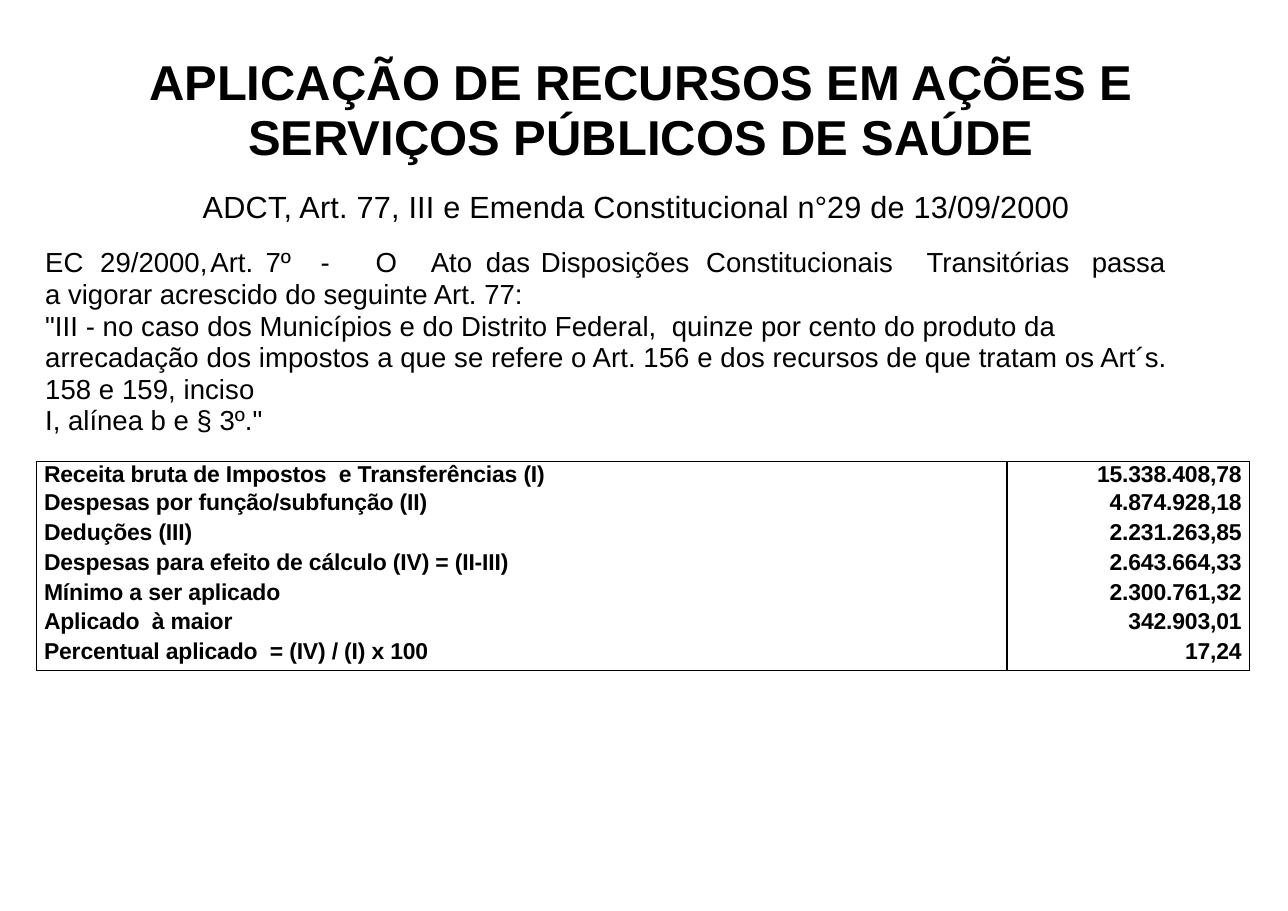
from pptx import Presentation
from pptx import util as u
from pptx.dml.color import RGBColor
from pptx.enum import text
from pptx.oxml import parse_xml
from pptx.oxml.ns import nsdecls

COLORS = {"ink": "000000"}
FONT = "Arial"
BORDER_WIDTH = u.Pt(0.85)

TITLE = "APLICAÇÃO DE RECURSOS EM AÇÕES E SERVIÇOS PÚBLICOS DE SAÚDE"
LEGAL_BASIS = "ADCT, Art. 77, III e Emenda Constitucional n°29 de 13/09/2000"
AMENDMENT = ("EC\t29/2000,\tArt.\t7º\t-\tO\tAto\tdas\tDisposições\tConstitucionais"
             "\tTransitórias\tpassa\ta vigorar acrescido do seguinte Art. 77:")
ARTICLE = ('"III - no caso dos Municípios e do Distrito Federal,  quinze por cento '
           "do produto da arrecadação dos impostos a que se refere o Art. 156 e dos "
           "recursos de que tratam os Art´s. 158 e 159, inciso")
ARTICLE_END = 'I, alínea b e § 3º."'
WORD_STOPS = (0.52, 1.64, 2.18, 2.57, 2.81, 3.16, 3.68, 4.24, 5.73, 7.58, 9.03, 9.86)

# Text, size, left indent, line spacing, space before, letter spacing (points)
CITATION = [
    (LEGAL_BASIS, 20, 1.44, None, 0, 0.15),
    (AMENDMENT, 18, 0.01, 21, 13.8, 0),
    (ARTICLE, 18, 0.01, 20.3, 0.6, 0.06),
    (ARTICLE_END, 18, 0.01, 20.4, 0, 0),
]

HEALTH_SPENDING = [
    ("Receita bruta de Impostos  e Transferências (I)", "15.338.408,78"),
    ("Despesas por função/subfunção (II)", "4.874.928,18"),
    ("Deduções (III)", "2.231.263,85"),
    ("Despesas para efeito de cálculo (IV) = (II-III)", "2.643.664,33"),
    ("Mínimo a ser aplicado", "2.300.761,32"),
    ("Aplicado  à maior", "342.903,01"),
    ("Percentual aplicado  = (IV) / (I) x 100", "17,24"),
]
ROW_HEIGHTS = [0.26] + [0.27] * 5 + [0.29]


def format_runs(paragraph, size, bold=False, tracking=0):
    for run in paragraph.runs:
        run.font.name = FONT
        run.font.size = u.Pt(size)
        run.font.bold = bold
        run.font.color.rgb = RGBColor.from_string(COLORS["ink"])
        run.font._element.set("spc", str(round(tracking * 100)))


def place(placeholder, left, top, width, height):
    placeholder.left, placeholder.top = u.Inches(left), u.Inches(top)
    placeholder.width, placeholder.height = u.Inches(width), u.Inches(height)
    frame = placeholder.text_frame
    frame.margin_left = frame.margin_right = frame.margin_top = frame.margin_bottom = 0
    frame.vertical_anchor = text.MSO_ANCHOR.TOP
    frame.auto_size = text.MSO_AUTO_SIZE.NONE
    frame.word_wrap = True
    return frame


def add_title(slide):
    frame = place(slide.shapes.title, 0.4, 0.5, 10.84, 0.95)
    frame.text = TITLE
    heading = frame.paragraphs[0]
    heading.alignment = text.PP_ALIGN.CENTER
    heading.line_spacing = u.Pt(36)
    format_runs(heading, 32, bold=True)


def add_citation(slide):
    frame = place(slide.placeholders[1], 0.4, 1.71, 10.6, 2.25)
    for index, (wording, size, indent, leading, before, tracking) in enumerate(CITATION):
        passage = frame.add_paragraph() if index else frame.paragraphs[0]
        passage.text = wording
        passage.alignment = text.PP_ALIGN.LEFT
        passage.space_before = u.Pt(before)
        passage.line_spacing = u.Pt(leading) if leading else 1.0
        format_runs(passage, size, tracking=tracking)
        # Plain indented text without bullets
        properties = passage._p.get_or_add_pPr()
        properties.set("marL", str(u.Inches(indent)))
        properties.set("indent", "0")
        properties.append(parse_xml(f'<a:buNone {nsdecls("a")}/>'))
        if "\t" in wording:
            stops = "".join(f'<a:tab pos="{u.Inches(stop)}" algn="l"/>' for stop in WORD_STOPS)
            properties.append(parse_xml(f'<a:tabLst {nsdecls("a")}>{stops}</a:tabLst>'))


def set_borders(cell, sides):
    properties = cell._tc.get_or_add_tcPr()
    for position, side in enumerate("LRTB"):
        paint = "<a:noFill/>"
        if side in sides:
            paint = f'<a:solidFill><a:srgbClr val="{COLORS["ink"]}"/></a:solidFill>'
        properties.insert(position, parse_xml(
            f'<a:ln{side} {nsdecls("a")} w="{BORDER_WIDTH}">{paint}</a:ln{side}>'))


def fill_cell(cell, wording, alignment, sides):
    cell.margin_left = cell.margin_right = u.Inches(0.07)
    cell.margin_top = cell.margin_bottom = 0
    cell.vertical_anchor = text.MSO_ANCHOR.TOP
    cell.fill.background()
    cell.text_frame.text = wording
    entry = cell.text_frame.paragraphs[0]
    entry.alignment = alignment
    format_runs(entry, 15, bold=True, tracking=-0.12)
    set_borders(cell, sides)


def add_spending_table(slide):
    last = len(HEALTH_SPENDING) - 1
    spending = slide.shapes.add_table(
        last + 1, 2, u.Inches(0.33), u.Inches(4.19), u.Inches(11.01), u.Inches(1.9)).table
    spending.first_row = spending.horz_banding = False
    for column, width in zip(spending.columns, (8.81, 2.2)):
        column.width = u.Inches(width)
    for index, (label, amount) in enumerate(HEALTH_SPENDING):
        spending.rows[index].height = u.Inches(ROW_HEIGHTS[index])
        sides = "LR" + ("T" if index == 0 else "") + ("B" if index == last else "")
        fill_cell(spending.cell(index, 0), label, text.PP_ALIGN.LEFT, sides)
        fill_cell(spending.cell(index, 1), amount, text.PP_ALIGN.RIGHT, sides)


def main():
    deck = Presentation()
    deck.slide_width, deck.slide_height = u.Inches(11.69), u.Inches(8.27)
    slide = deck.slides.add_slide(deck.slide_layouts[1])
    add_title(slide)
    add_citation(slide)
    add_spending_table(slide)
    deck.save("out.pptx")


if __name__ == "__main__":
    main()
